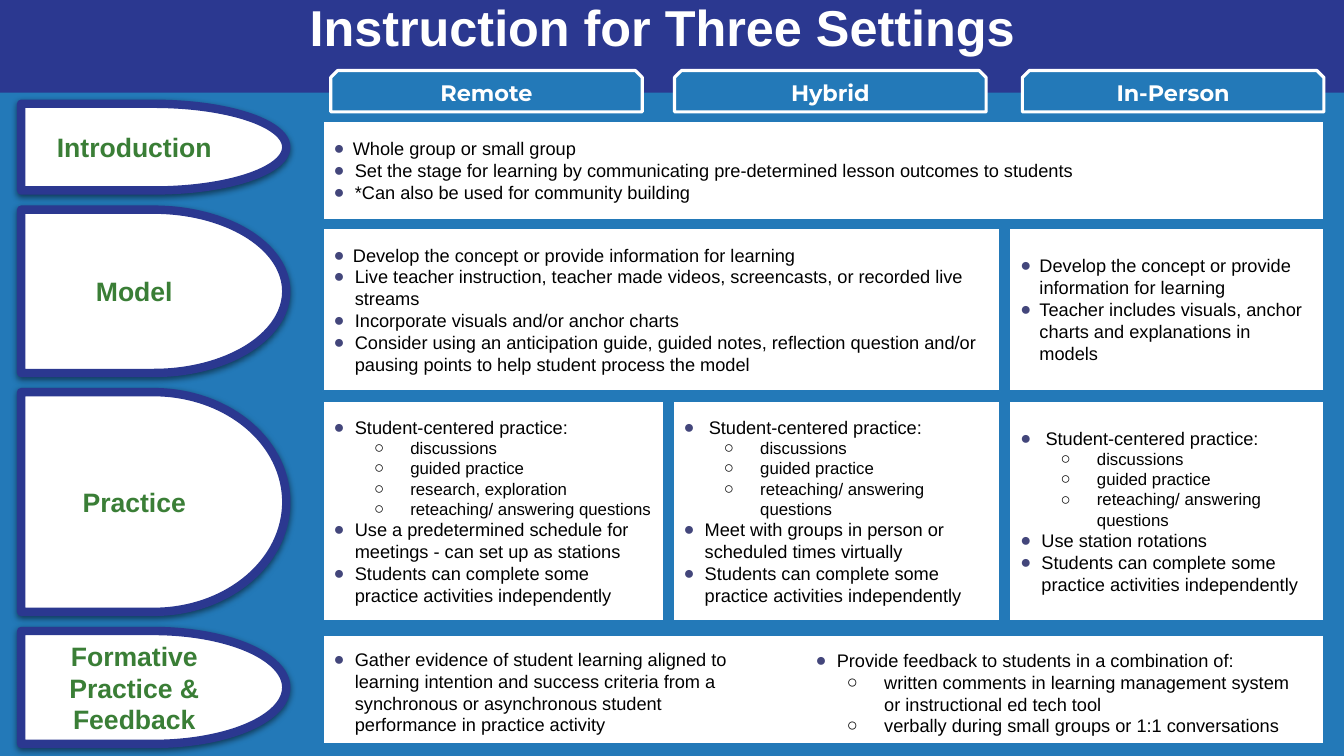
from dataclasses import dataclass
from enum import Enum
from typing import NamedTuple

from lxml.etree import SubElement
from pptx import Presentation
from pptx.dml.color import RGBColor
from pptx.enum.shapes import MSO_SHAPE
from pptx.enum.text import MSO_ANCHOR, MSO_AUTO_SIZE, PP_ALIGN
from pptx.oxml.ns import qn
from pptx.shapes.autoshape import Shape
from pptx.slide import Slide
from pptx.text.text import TextFrame
from pptx.util import Emu, Inches, Pt


@dataclass(frozen=True)
class Theme:
    navy: str = "2B3890"
    blue: str = "2379B8"
    green: str = "3A7E36"
    white: str = "FFFFFF"
    black: str = "000000"
    bullet: str = "43467B"
    body_font: str = "Arial"
    tab_font: str = "Montserrat"
    title_size: float = 36
    label_size: float = 19
    tab_size: float = 16
    item_size: float = 13
    detail_size: float = 12
    inset: float = 0.11


THEME = Theme()


class Span(NamedTuple):
    start: float
    size: float

    @property
    def end(self) -> float:
        return self.start + self.size


class Level(NamedTuple):
    depth: int
    margin: float
    hanging: float
    mark: str
    mark_color: str
    size: float


class Kind(Enum):
    LEAD = Level(0, 0.19, 0.22, "●", THEME.bullet, THEME.item_size)
    ITEM = Level(0, 0.21, 0.23, "●", THEME.bullet, THEME.item_size)
    WIDE = Level(0, 0.25, 0.28, "●", THEME.bullet, THEME.item_size)
    DETAIL = Level(1, 0.76, 0.36, "○", THEME.black, THEME.detail_size)
    FEEDBACK = Level(1, 0.68, 0.37, "○", THEME.black, THEME.item_size)


class Entry(NamedTuple):
    text: str
    kind: Kind = Kind.ITEM


class Setting(NamedTuple):
    name: str
    tab: Span
    column: Span


@dataclass(frozen=True)
class Card:
    first: int
    last: int
    entries: tuple[Entry, ...] = ()


@dataclass(frozen=True)
class Phase:
    name: str
    label: Span
    row: Span
    cards: tuple[Card, ...]


# Grid: one column per setting, one row per phase
SETTINGS = (
    Setting("Remote", Span(3.28, 3.09), Span(3.2, 3.39)),
    Setting("Hybrid", Span(6.69, 3.09), Span(6.67, 3.25)),
    Setting("In-Person", Span(10.14, 2.99), Span(10.01, 3.12)),
)
TAB_ROW = Span(0.7, 0.41)
LABEL_COLUMN = Span(0.21, 2.63)

CONCEPT = Entry("Develop the concept or provide information for learning", Kind.LEAD)
INDEPENDENT = Entry("Students can complete some practice activities independently")
CENTERED = "Student-centered practice:"
DISCUSS = (Entry("discussions", Kind.DETAIL), Entry("guided practice", Kind.DETAIL))
RETEACH = Entry("reteaching/ answering questions", Kind.DETAIL)

PHASES = (
    Phase("Introduction", Span(1.03, 0.86), Span(1.2, 0.98), (
        Card(0, 2, (
            Entry("Whole group or small group", Kind.LEAD),
            Entry("Set the stage for learning by communicating pre-determined lesson outcomes to students"),
            Entry("*Can also be used for community building"))),)),
    Phase("Model", Span(2.08, 1.62), Span(2.26, 1.62), (
        Card(0, 1, (
            CONCEPT,
            Entry("Live teacher instruction, teacher made videos, screencasts, or recorded live streams"),
            Entry("Incorporate visuals and/or anchor charts"),
            Entry("Consider using an anticipation guide, guided notes, reflection question and/or "
                  "pausing points to help student process the model"))),
        Card(2, 2, (
            CONCEPT,
            Entry("Teacher includes visuals, anchor charts and explanations in models", Kind.LEAD))))),
    Phase("Practice", Span(3.89, 2.18), Span(3.98, 2.18), (
        Card(0, 0, (
            Entry(CENTERED), *DISCUSS, Entry("research, exploration", Kind.DETAIL), RETEACH,
            Entry("Use a predetermined schedule for meetings - can set up as stations"), INDEPENDENT)),
        Card(1, 1, (
            Entry(CENTERED, Kind.WIDE), *DISCUSS, RETEACH,
            Entry("Meet with groups in person or scheduled times virtually"), INDEPENDENT)),
        Card(2, 2, (
            Entry(CENTERED, Kind.WIDE), *DISCUSS, RETEACH,
            Entry("Use station rotations"), INDEPENDENT)))),
    Phase("Formative Practice & Feedback", Span(6.26, 1.12), Span(6.3, 1.08), (Card(0, 2),)),
)

FEEDBACK_LISTS = (
    (Span(3.2, 4.53), Span(6.32, 0.98), (
        Entry("Gather evidence of student learning aligned to learning intention and success criteria "
              "from a synchronous or asynchronous student performance in practice activity"),)),
    (Span(7.98, 5.06), Span(6.33, 0.95), (
        Entry("Provide feedback to students in a combination of:"),
        Entry("written comments in learning management system or instructional ed tech tool", Kind.FEEDBACK),
        Entry("verbally during small groups or 1:1 conversations", Kind.FEEDBACK))),
)


def color(code: str) -> RGBColor:
    return RGBColor.from_string(code)


def place(shape: Shape, across: Span, down: Span) -> None:
    shape.left, shape.width = Inches(across.start), Inches(across.size)
    shape.top, shape.height = Inches(down.start), Inches(down.size)


def set_frame(frame: TextFrame, anchor: MSO_ANCHOR, side: float = THEME.inset, edge: float = THEME.inset) -> None:
    frame.word_wrap, frame.auto_size, frame.vertical_anchor = True, MSO_AUTO_SIZE.NONE, anchor
    frame.margin_left = frame.margin_right = Inches(side)
    frame.margin_top = frame.margin_bottom = Inches(edge)


def add_panel(slide: Slide, preset: MSO_SHAPE, across: Span, down: Span, fill: str,
              line: str | None = None, weight: float = 0) -> Shape:
    panel = slide.shapes.add_shape(preset, 0, 0, 0, 0)
    place(panel, across, down)
    panel.shadow.inherit = False
    panel.fill.solid()
    panel.fill.fore_color.rgb = color(fill)
    if line:
        panel.line.color.rgb = color(line)
        panel.line.width = Pt(weight)
    else:
        panel.line.fill.background()
    set_frame(panel.text_frame, MSO_ANCHOR.MIDDLE)
    return panel


def write_heading(frame: TextFrame, text: str, font: str, size: float, ink: str,
                  align: PP_ALIGN = PP_ALIGN.CENTER) -> None:
    frame.text = text
    heading = frame.paragraphs[0]
    heading.alignment = align
    heading.font.name, heading.font.size, heading.font.bold = font, Pt(size), True
    heading.font.color.rgb = color(ink)


def write_list(frame: TextFrame, entries: tuple[Entry, ...]) -> None:
    frame.text = "\n".join(entry.text for entry in entries)
    for paragraph, entry in zip(frame.paragraphs, entries):
        level = entry.kind.value
        paragraph.level = level.depth
        props = paragraph._p.get_or_add_pPr()
        props.set("marL", str(Inches(level.margin)))
        props.set("indent", str(-Inches(level.hanging)))
        SubElement(SubElement(props, qn("a:buClr")), qn("a:srgbClr"), val=level.mark_color)
        SubElement(props, qn("a:buFont"), typeface=THEME.body_font)
        SubElement(props, qn("a:buChar"), char=level.mark)
        paragraph.alignment, paragraph.space_before = PP_ALIGN.LEFT, Pt(0)
        paragraph.font.name, paragraph.font.size = THEME.body_font, Pt(level.size)
        paragraph.font.color.rgb = color(THEME.black)


def add_soft_shadow(shape: Shape) -> None:
    effects = shape._element.spPr.find(qn("a:effectLst"))
    shadow = SubElement(effects, qn("a:outerShdw"), blurRad=str(Pt(4.5)), dist=str(Pt(1.5)),
                        dir=str(90 * 60000), algn="bl", rotWithShape="0")
    ink = SubElement(shadow, qn("a:srgbClr"), val=THEME.black)
    SubElement(ink, qn("a:alpha"), val="50000")


def add_phase(slide: Slide, phase: Phase) -> None:
    label = add_panel(slide, MSO_SHAPE.FLOWCHART_DELAY, LABEL_COLUMN, phase.label, THEME.white, THEME.navy, 6)
    add_soft_shadow(label)
    write_heading(label.text_frame, phase.name, THEME.body_font, THEME.label_size, THEME.green)
    for card in phase.cards:
        left = SETTINGS[card.first].column.start
        across = Span(left, SETTINGS[card.last].column.end - left)
        panel = add_panel(slide, MSO_SHAPE.RECTANGLE, across, phase.row, THEME.white, THEME.blue, 1.5)
        if card.entries:
            write_list(panel.text_frame, card.entries)


def main() -> None:
    deck = Presentation()
    deck.slide_width, deck.slide_height = Inches(13.33), Inches(7.5)
    slide = deck.slides.add_slide(deck.slide_layouts.get_by_name("Two Content"))
    slide.background.fill.solid()
    slide.background.fill.fore_color.rgb = color(THEME.blue)
    title, *feedback = slide.placeholders

    # Header band and setting tabs
    add_panel(slide, MSO_SHAPE.RECTANGLE, Span(0, Emu(deck.slide_width).inches), Span(-0.06, 0.98), THEME.navy)
    for setting in SETTINGS:
        tab = add_panel(slide, MSO_SHAPE.SNIP_2_SAME_RECTANGLE, setting.tab, TAB_ROW, THEME.blue, THEME.white, 2.25)
        write_heading(tab.text_frame, setting.name, THEME.tab_font, THEME.tab_size, THEME.white)

    # Phase labels and cards
    for phase in PHASES:
        add_phase(slide, phase)

    # Feedback lists, in front of their card
    for body, (across, down, entries) in zip(feedback, FEEDBACK_LISTS):
        place(body, across, down)
        set_frame(body.text_frame, MSO_ANCHOR.TOP)
        write_list(body.text_frame, entries)
        slide.shapes._spTree.append(body._element)

    # Title, in front of the header band
    place(title, Span(2.47, 10.73), Span(-0.05, 0.7))
    title.fill.solid()
    title.fill.fore_color.rgb = color(THEME.navy)
    set_frame(title.text_frame, MSO_ANCHOR.MIDDLE, side=0.6, edge=0)
    write_heading(title.text_frame, "Instruction for Three Settings", THEME.body_font,
                  THEME.title_size, THEME.white, PP_ALIGN.LEFT)
    title.text_frame.paragraphs[0].line_spacing = 0.9
    slide.shapes._spTree.append(title._element)

    deck.save("out.pptx")


if __name__ == "__main__":
    main()
